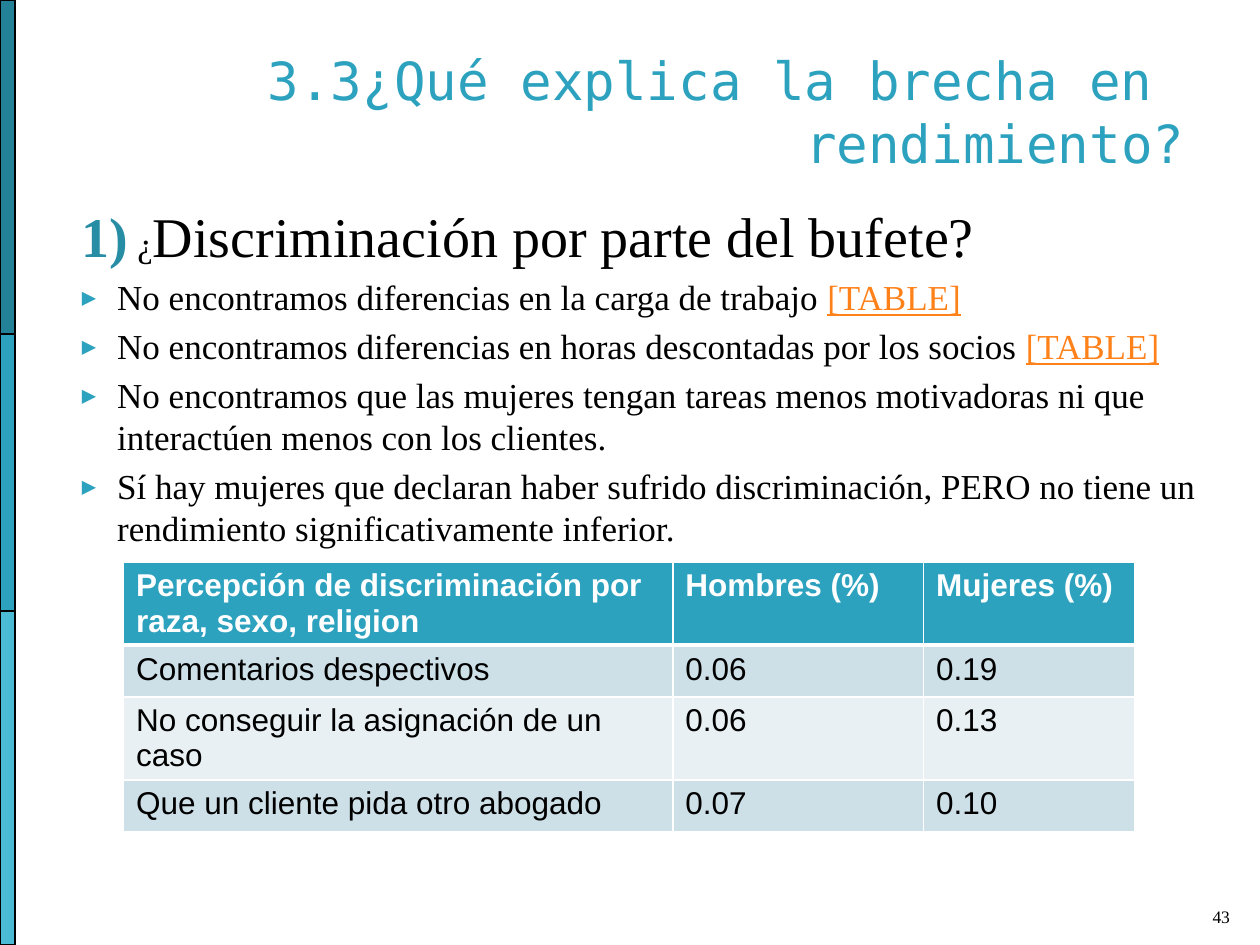
from dataclasses import dataclass

import pptx
import pptx.dml.color
import pptx.enum.shapes
import pptx.enum.text
import pptx.oxml
import pptx.oxml.ns
import pptx.util

Inches = pptx.util.Inches
Pt = pptx.util.Pt
RGBColor = pptx.dml.color.RGBColor
Align = pptx.enum.text.PP_ALIGN
Anchor = pptx.enum.text.MSO_ANCHOR

TEAL = RGBColor(0x2D, 0xA2, 0xBF)
DARK_TEAL = RGBColor(0x24, 0x82, 0x98)
LIGHT_TEAL = RGBColor(0x4B, 0xBB, 0xD5)
NUMBER_TEAL = RGBColor(0x27, 0x8D, 0xA5)
ORANGE = RGBColor(0xFF, 0x81, 0x19)
BLACK = RGBColor(0, 0, 0)
WHITE = RGBColor(0xFF, 0xFF, 0xFF)
BAND_DARK = RGBColor(0xCD, 0xE0, 0xE8)
BAND_LIGHT = RGBColor(0xE8, 0xF0, 0xF4)

SERIF = "Times New Roman"


@dataclass
class Band:
    top: float
    color: RGBColor


@dataclass
class Finding:
    text: str
    link: str = ""


BANDS = [Band(0, DARK_TEAL), Band(2.65, TEAL), Band(4.85, LIGHT_TEAL)]
FINDINGS = [
    Finding("No encontramos diferencias en la carga de trabajo ", "[TABLE]"),
    Finding("No encontramos diferencias en horas descontadas por los socios ", "[TABLE]"),
    Finding("No encontramos que las mujeres tengan tareas menos motivadoras "
            "ni que interactúen menos con los clientes."),
    Finding("Sí hay mujeres que declaran haber sufrido discriminación, "
            "PERO no tiene un rendimiento significativamente inferior."),
]
PERCEPTIONS = [
    ("Percepción de discriminación por raza, sexo, religion", "Hombres (%)", "Mujeres (%)"),
    ("Comentarios despectivos", "0.06", "0.19"),
    ("No conseguir la asignación de un caso", "0.06", "0.13"),
    ("Que un cliente pida otro abogado", "0.07", "0.10"),
]
COLUMN_WIDTHS = [4.36, 1.99, 1.68]
ROW_HEIGHT = 0.41


def add_text(paragraph, text: str, *, size: float, font: str = SERIF,
             color: RGBColor = BLACK, bold: bool = False, underline: bool = False) -> None:
    run = paragraph.add_run()
    run.text = text
    run.font.size = Pt(size)
    run.font.name = font
    run.font.color.rgb = color
    run.font.bold = bold
    run.font.underline = underline


def place(shape, left: float, top: float, width: float, height: float) -> None:
    shape.left, shape.top = Inches(left), Inches(top)
    shape.width, shape.height = Inches(width), Inches(height)


def add_band(slide, band: Band) -> None:
    strip = slide.shapes.add_shape(pptx.enum.shapes.MSO_SHAPE.RECTANGLE, 0,
                                   Inches(band.top), Inches(0.12), Inches(2.65))
    strip.shadow.inherit = False
    strip.fill.solid()
    strip.fill.fore_color.rgb = band.color
    strip.line.color.rgb = BLACK
    strip.line.width = Pt(0.75)


def set_hanging_indent(paragraph, bulleted: bool) -> None:
    properties = paragraph._p.get_or_add_pPr()
    properties.set("marL", str(Inches(0.4)))
    properties.set("indent", str(Inches(-0.28)))
    namespace = pptx.oxml.ns.nsdecls("a")
    if bulleted:
        parts = [f'<a:buClr {namespace}><a:srgbClr val="{TEAL}"/></a:buClr>',
                 f'<a:buSzPct {namespace} val="68000"/>',
                 f'<a:buFont {namespace} typeface="DejaVu Sans Mono"/>',
                 f'<a:buChar {namespace} char="▶"/>']
    else:
        parts = [f"<a:buNone {namespace}/>"]
    for part in parts:
        properties.append(pptx.oxml.parse_xml(part))


def add_finding(frame, finding: Finding) -> None:
    paragraph = frame.add_paragraph()
    set_hanging_indent(paragraph, bulleted=True)
    paragraph.space_before = Pt(4)
    add_text(paragraph, finding.text, size=20)
    if finding.link:
        add_text(paragraph, finding.link, size=20, color=ORANGE, underline=True)


def set_cell_borders(cell, **widths: float) -> None:
    """Draw white borders; keys are L, R, T and B in that order, widths in points."""
    properties = cell._tc.get_or_add_tcPr()
    for side, width in widths.items():
        properties.append(pptx.oxml.parse_xml(
            f'<a:ln{side} {pptx.oxml.ns.nsdecls("a")} w="{Pt(width)}"><a:solidFill>'
            f'<a:srgbClr val="{WHITE}"/></a:solidFill></a:ln{side}>'))


def add_perception_table(slide) -> None:
    table = slide.shapes.add_table(
        len(PERCEPTIONS), len(COLUMN_WIDTHS), Inches(0.98), Inches(4.46),
        Inches(sum(COLUMN_WIDTHS)), Inches(ROW_HEIGHT * len(PERCEPTIONS))).table
    for column, width in zip(table.columns, COLUMN_WIDTHS):
        column.width = Inches(width)
    for row_index, values in enumerate(PERCEPTIONS):
        header = row_index == 0
        band = BAND_DARK if row_index % 2 else BAND_LIGHT
        for column_index, value in enumerate(values):
            cell = table.cell(row_index, column_index)
            set_cell_borders(cell, L=1, R=1, T=3 if row_index == 1 else 1,
                             B=3 if header else 1)
            cell.margin_bottom = Inches(0.01)
            cell.fill.solid()
            cell.fill.fore_color.rgb = TEAL if header else band
            paragraph = cell.text_frame.paragraphs[0]
            paragraph.alignment = Align.LEFT
            add_text(paragraph, value, size=18, font="Arial",
                     color=WHITE if header else BLACK, bold=header)


def main() -> None:
    presentation = pptx.Presentation()
    presentation.slide_width, presentation.slide_height = Inches(10), Inches(7.5)
    slide = presentation.slides.add_slide(presentation.slide_layouts[1])

    for band in BANDS:
        add_band(slide, band)

    title = slide.shapes.title
    place(title, 0.5, 0.3, 9, 1.17)
    title.text_frame.vertical_anchor = Anchor.MIDDLE
    title.text_frame.auto_size = pptx.enum.text.MSO_AUTO_SIZE.NONE
    heading = title.text_frame.paragraphs[0]
    heading.alignment = Align.RIGHT
    title_format = dict(size=30, font="DejaVu Sans Mono", color=TEAL)
    add_text(heading, "3.3¿Qué explica la brecha en ", **title_format)
    heading.add_line_break()
    add_text(heading, "rendimiento?", **title_format)

    body = slide.placeholders[1]
    place(body, 0.43, 1.55, 9.29, 2.83)
    findings = body.text_frame
    findings.auto_size = pptx.enum.text.MSO_AUTO_SIZE.NONE
    findings.margin_top = Inches(0.05)
    question = findings.paragraphs[0]
    set_hanging_indent(question, bulleted=False)
    question.space_before = Pt(0)
    add_text(question, "1)", size=32, color=NUMBER_TEAL, bold=True)
    add_text(question, " ¿", size=20)
    add_text(question, "Discriminación por parte del bufete?", size=32)
    for finding in FINDINGS:
        add_finding(findings, finding)

    page_number = slide.shapes.add_textbox(Inches(9.46), Inches(7.01),
                                           Inches(0.4), Inches(0.4)).text_frame
    page_number.word_wrap = True
    page_number.vertical_anchor = Anchor.BOTTOM
    page_number.paragraphs[0].alignment = Align.RIGHT
    add_text(page_number.paragraphs[0], "43", size=10)

    add_perception_table(slide)
    presentation.save("out.pptx")


if __name__ == "__main__":
    main()
